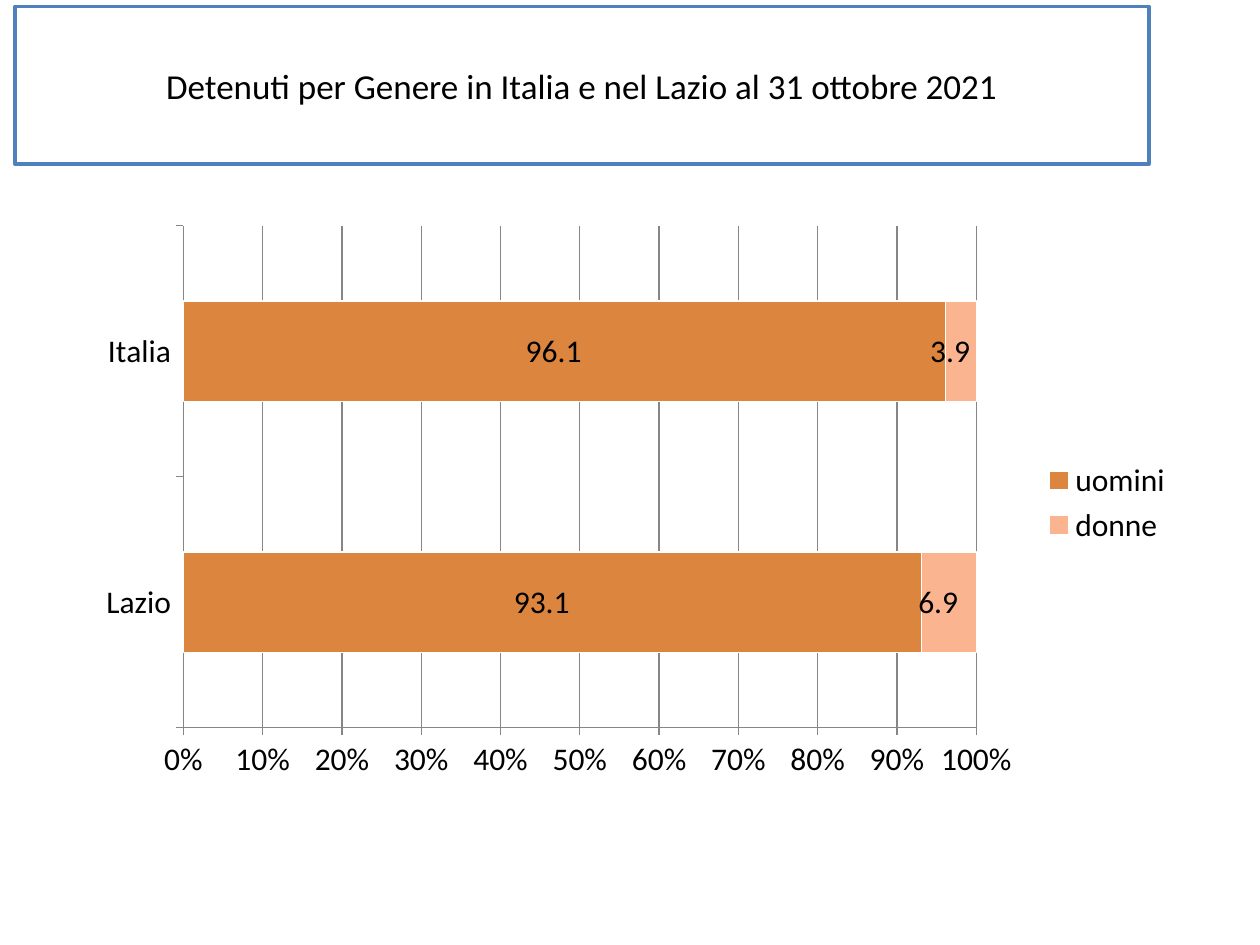
from pptx import Presentation
from pptx.chart.data import CategoryChartData as Data
from pptx.dml.color import RGBColor
from pptx.enum.chart import XL_CHART_TYPE as Kind, XL_LABEL_POSITION as Spot
from pptx.enum.chart import XL_LEGEND_POSITION as Side, XL_TICK_MARK as Tick
from pptx.enum.text import MSO_ANCHOR as Anchor, PP_ALIGN as Align
from pptx.oxml import parse_xml
from pptx.oxml.ns import nsdecls
from pptx.util import Cm, Pt

BLACK = RGBColor(0x00, 0x00, 0x00)
WHITE = RGBColor(0xFF, 0xFF, 0xFF)
BLUE = RGBColor(0x4F, 0x81, 0xBD)
GREY = RGBColor(0x86, 0x86, 0x86)
ORANGE = RGBColor(0xDC, 0x85, 0x3E)
PEACH = RGBColor(0xFA, 0xB4, 0x90)
NUMBER = r"_-* #,##0.0\ _€_-"


def apply(obj, **vals):
    for name, val in vals.items():
        setattr(obj, name, val)


class Deck:
    """Holds the font style and the current slide."""

    def __init__(self, wide, high, face="Calibri"):
        self.face = face
        self.file = Presentation()
        apply(self.file, slide_width=Cm(wide), slide_height=Cm(high))
        self.slide = self.file.slides.add_slide(self.file.slide_layouts[5])

    def font(self, font, size):
        apply(font, name=self.face, size=Pt(size), bold=False)
        font.color.rgb = BLACK

    def line(self, line, color, width):
        line.color.rgb = color
        line.width = Pt(width)

    def title(self, text, box):
        shape = self.slide.shapes.title
        apply(shape, **dict(zip(("left", "top", "width", "height"), map(Cm, box))))
        shape.fill.solid()
        shape.fill.fore_color.rgb = WHITE
        self.line(shape.line, BLUE, 2)
        frame = shape.text_frame
        apply(frame, text=text, word_wrap=True, vertical_anchor=Anchor.MIDDLE)
        para = frame.paragraphs[0]
        para.alignment = Align.CENTER
        self.font(para.runs[0].font, 20)

    def bars(self, cats, rows, box, area):
        data = Data(number_format=NUMBER)
        data.categories = cats
        for name, vals, _ in rows:
            data.add_series(name, vals)
        chart = self.slide.shapes.add_chart(
            Kind.BAR_STACKED_100, *map(Cm, box), data).chart
        apply(chart, has_title=False, has_legend=True)
        self.font(chart.font, 18)
        apply(chart.legend, position=Side.RIGHT, include_in_layout=False)
        plot = chart.plots[0]
        apply(plot, gap_width=150, overlap=100, vary_by_categories=False)
        for series, (_, _, color) in zip(plot.series, rows):
            self.series(series, color)
        self.axes(chart)
        self.place(chart, area)

    def series(self, series, color):
        series.format.fill.solid()
        series.format.fill.fore_color.rgb = color
        self.line(series.format.line, WHITE, 0.75)
        labels = series.data_labels
        apply(labels, show_value=True, position=Spot.CENTER,
              number_format=NUMBER, number_format_is_linked=False)
        self.font(labels.font, 18)

    def axes(self, chart):
        for axis in (chart.category_axis, chart.value_axis):
            apply(axis, major_tick_mark=Tick.OUTSIDE, minor_tick_mark=Tick.NONE)
            self.line(axis.format.line, GREY, 0.75)
            self.font(axis.tick_labels.font, 18)
        axis = chart.value_axis
        apply(axis, has_major_gridlines=True, minimum_scale=0,
              maximum_scale=1, major_unit=0.1)
        apply(axis.tick_labels, number_format="0%", number_format_is_linked=False)
        self.line(axis.major_gridlines.format.line, GREY, 0.75)

    def place(self, chart, area):
        modes = "".join(f'<c:{key}Mode val="edge"/>' for key in "xy")
        sizes = "".join(f'<c:{key} val="{val}"/>' for key, val in zip("xywh", area))
        grid = chart._chartSpace.chart.plotArea
        for old in grid.xpath("c:layout"):
            grid.remove(old)
        grid.insert(0, parse_xml(
            f'<c:layout {nsdecls("c")}><c:manualLayout>'
            f'<c:layoutTarget val="inner"/>{modes}{sizes}'
            '</c:manualLayout></c:layout>'))


def main():
    deck = Deck(25.4, 19.05)
    deck.title("Detenuti per Genere in Italia e nel Lazio al 31 ottobre 2021",
               (0.3, 0.13, 22.86, 3.18))
    rows = [("uomini", (93.1, 96.1), ORANGE), ("donne", (6.9, 3.9), PEACH)]
    deck.bars(("Lazio", "Italia"), rows, (1.7, 4.32, 22.2, 11.63),
              (0.09, 0.02, 0.72, 0.87))
    deck.file.save("out.pptx")


if __name__ == "__main__":
    main()
